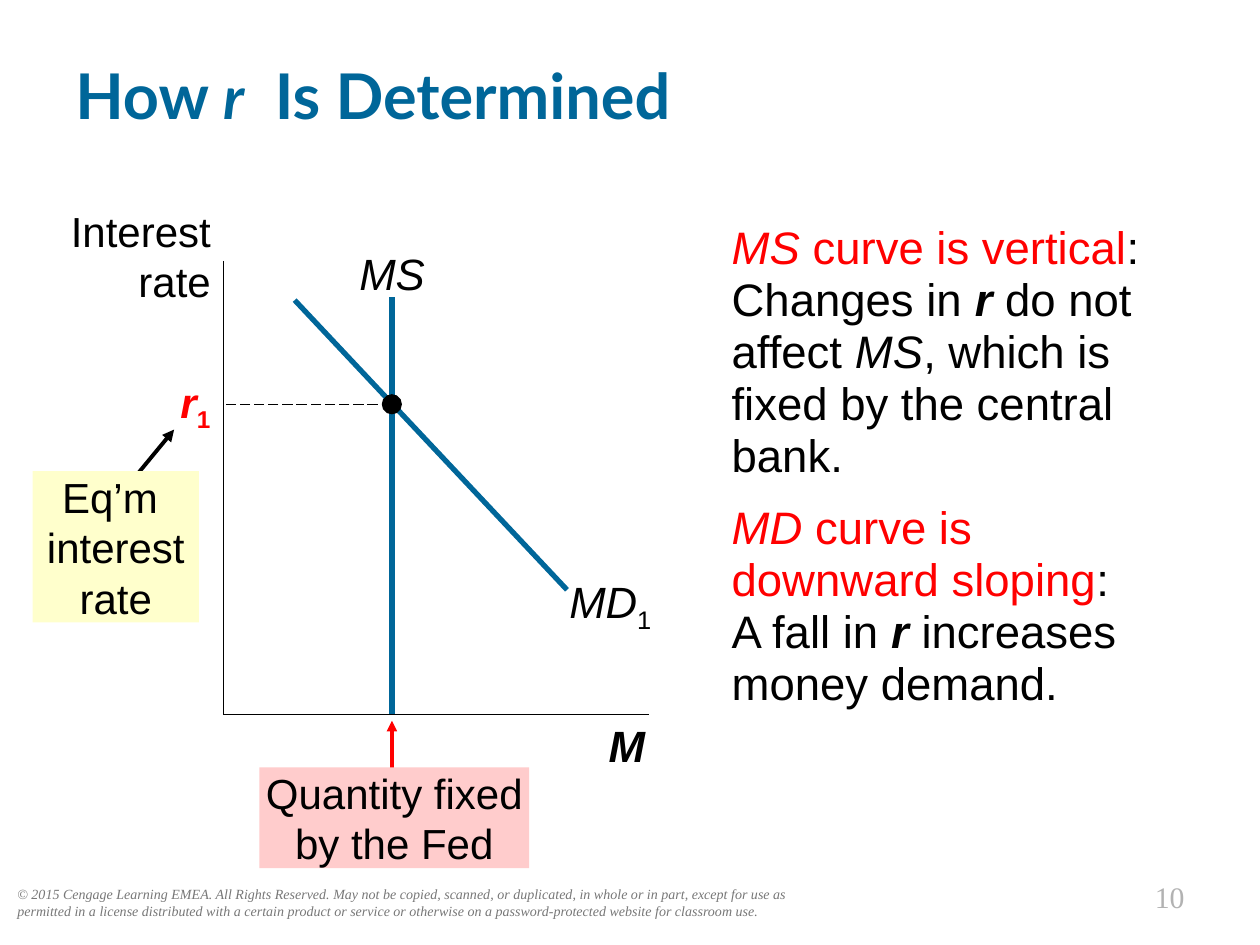
from lxml import etree
from pptx import Presentation
from pptx.dml import color as dml_color
from pptx.enum import dml, shapes, text
from pptx.oxml import ns
from pptx.util import Cm, Pt

COLORS = {
    "blue": "006699", "red": "FF0000", "black": "000000",
    "notice": "777777", "number": "B2B2B2",
    "pink": "FFCCCC", "cream": "FFFFCC",
}
ITALIC = {"italic": True}
STRONG = {"bold": True, "italic": True}
SUBSCRIPT = {"baseline": "-25000"}
LEFT, CENTER, RIGHT = text.PP_ALIGN.LEFT, text.PP_ALIGN.CENTER, text.PP_ALIGN.RIGHT


def rgb(name):
    return dml_color.RGBColor.from_string(COLORS[name])


def write_runs(paragraph, runs, base):
    for words, changes in runs:
        for index, line in enumerate(words.split("\n")):
            if index:
                paragraph.add_line_break()
            if not line:
                continue
            run = paragraph.add_run()
            run.text = line
            style = {"name": "Arial", "size": 24, "color": "black", **base, **changes}
            run.font.color.rgb = rgb(style.pop("color"))
            baseline = style.pop("baseline", None)
            if baseline:
                run.font._element.set("baseline", baseline)
            style["size"] = Pt(style["size"])
            for key, value in style.items():
                setattr(run.font, key, value)


def add_text(slide, box, paragraphs, base, align=LEFT, margins=(0, 0),
             anchor=text.MSO_ANCHOR.TOP, fill=None, spacing=None):
    holder = slide.shapes.add_textbox(*map(Cm, box))
    if fill:
        holder.fill.solid()
        holder.fill.fore_color.rgb = rgb(fill)
    frame = holder.text_frame
    side, edge = map(Cm, margins)
    layout = {"word_wrap": True, "vertical_anchor": anchor, "margin_left": side,
              "margin_right": side, "margin_top": edge, "margin_bottom": edge}
    for key, value in layout.items():
        setattr(frame, key, value)
    for index, runs in enumerate(paragraphs):
        paragraph = frame.add_paragraph() if index else frame.paragraphs[0]
        paragraph.alignment = align
        if spacing:
            paragraph.line_spacing = spacing
        if index:
            paragraph.space_before = Pt(12)
        write_runs(paragraph, runs, base)


def add_line(slide, start, end, color="black", width=0.75, dash=None, arrow=False):
    line = slide.shapes.add_connector(
        shapes.MSO_CONNECTOR.STRAIGHT, *map(Cm, (*start, *end)))
    line.line.color.rgb = rgb(color)
    line.line.width = Pt(width)
    if dash:
        line.line.dash_style = dash
    if arrow:
        etree.SubElement(line.line._get_or_add_ln(), ns.qn("a:tailEnd"), type="triangle")
    etree.SubElement(line._element.spPr, ns.qn("a:effectLst"))


def add_title(slide, box):
    runs = [("How ", {}), ("r", {"size": 34, "italic": True}), ("  Is Determined", {})]
    add_text(slide, box, [runs],
             {"name": "Lato", "size": 36, "color": "blue", "bold": True},
             margins=(0.25, 0.13), anchor=text.MSO_ANCHOR.MIDDLE)


def add_money_market(slide, box):
    left, top, width, height = box

    def at(x, y):
        return left + x, top + y

    axis_x, axis_y, supply_x, rate_y = 3.84, 10.26, 7.24, 4.01
    dot = 0.38

    add_line(slide, at(axis_x, 1.12), at(axis_x, axis_y))
    add_line(slide, at(axis_x, axis_y), at(width, axis_y))
    add_line(slide, at(supply_x, axis_y), at(supply_x, 1.85), "blue", 3)
    add_line(slide, at(5.28, 1.91), at(10.77, 7.75), "blue", 3)
    add_line(slide, at(supply_x, rate_y), at(axis_x, rate_y),
             dash=dml.MSO_LINE.LONG_DASH)

    equilibrium = slide.shapes.add_shape(
        shapes.MSO_SHAPE.OVAL,
        *map(Cm, (*at(supply_x - dot / 2, rate_y - dot / 2), dot, dot)))
    equilibrium.shadow.inherit = False
    equilibrium.fill.solid()
    equilibrium.fill.fore_color.rgb = rgb("black")
    equilibrium.line.color.rgb = rgb("black")

    add_line(slide, at(supply_x, 11.63), at(supply_x, 10.39), "red", 2, arrow=True)
    add_line(slide, at(1.91, 5.66), at(2.85, 4.52), width=2.25, arrow=True)

    labels = [
        ((11.35, 10.34), (1.25, 1.07), [("M", STRONG)], 25, CENTER, None),
        ((0.36, 0), (3.23, 2.03), [("Interest rate", {})], 24, RIGHT, None),
        ((6.43, 0.84), (1.63, 1.07), [("MS", ITALIC)], 25, CENTER, None),
        ((10.64, 7.44), (2.01, 1.07), [("MD", ITALIC), ("1", SUBSCRIPT)],
         25, CENTER, None),
        ((2.77, 3.45), (0.81, 1.02),
         [("r", {**STRONG, "color": "red"}),
          ("1", {**SUBSCRIPT, "bold": True, "color": "red"})], 24, RIGHT, None),
        ((4.57, 11.33), (5.44, 2.03), [("Quantity fixed by the Fed", {})],
         24, CENTER, "pink"),
        ((0, 5.36), (3.35, 3.05), [("Eq’m \ninterest rate", {})],
         24, CENTER, "cream"),
    ]
    for place, extent, runs, size, align, fill in labels:
        add_text(slide, (*at(*place), *extent), [runs], {"size": size}, align, fill=fill)


def add_explanation(slide, box):
    red = {"color": "red"}
    supply = [("MS", {**ITALIC, **red}), (" curve is vertical", red),
              (": Changes in ", {}), ("r", STRONG), (" do not affect ", {}),
              ("MS", ITALIC), (", which is fixed by the central bank.", {})]
    demand = [("MD", {**ITALIC, **red}), (" curve is \ndownward sloping", red),
              (":\nA fall in ", {}), ("r", STRONG), (" increases money demand.", {})]
    add_text(slide, box, [supply, demand], {"size": 26},
             margins=(0.25, 0.13), spacing=0.95)


def add_footer(slide, box):
    left, top, width, height = box
    notice = ("© 2015 Cengage Learning EMEA. All Rights Reserved. May not be copied, "
              "scanned, or duplicated, in whole or in part, except for use as permitted "
              "in a license distributed with a certain product or service or otherwise "
              "on a password-protected website for classroom use.")
    serif = {"name": "Times New Roman"}
    number_width = 3.18
    add_text(slide, (left, top + 0.15, 16.33, 0.94), [[(notice, ITALIC)]],
             {**serif, "size": 8, "color": "notice"}, margins=(0.25, 0.13))
    add_text(slide, (left + width - number_width, top, number_width, height),
             [[("10", {})]], {**serif, "size": 17, "color": "number"}, RIGHT,
             margins=(0.25, 0.13))


def main():
    deck = Presentation()
    deck.slide_width, deck.slide_height = Cm(25.4), Cm(19.05)
    slide = deck.slides.add_slide(deck.slide_layouts[6])
    add_footer(slide, (0.1, 17.58, 24.03, 0.97))
    add_title(slide, (1.27, 0.64, 22.86, 2.54))
    add_explanation(slide, (14.5, 4.37, 9.12, 10.97))
    add_money_market(slide, (0.66, 4.14, 12.42, 13.36))
    deck.save("out.pptx")


if __name__ == "__main__":
    main()
